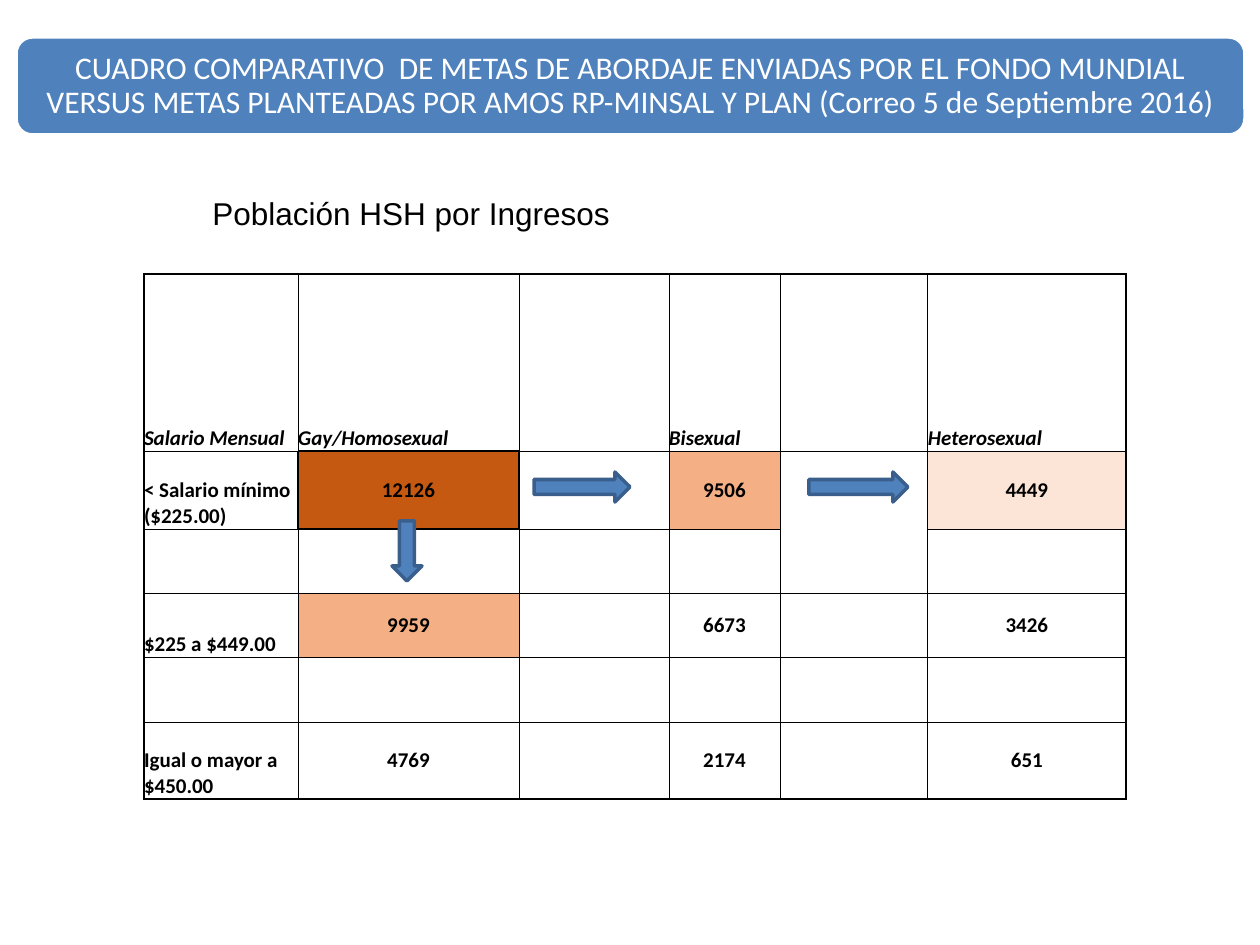
import lxml.etree
import pptx
import pptx.dml.color
import pptx.enum.shapes
import pptx.enum.text
import pptx.oxml.ns
import pptx.util

EMU_PER_PX = 914400 / 126
SHAPES = pptx.enum.shapes.MSO_SHAPE
ALIGN = pptx.enum.text.PP_ALIGN
ANCHOR = pptx.enum.text.MSO_ANCHOR
AUTO_SIZE = pptx.enum.text.MSO_AUTO_SIZE

BLACK = "000000"
WHITE = "FFFFFF"
BLUE = "4F81BD"
DARK_BLUE = "3A5F8C"

TITLE = (
    "CUADRO COMPARATIVO  DE METAS DE ABORDAJE ENVIADAS POR EL FONDO MUNDIAL "
    "VERSUS METAS PLANTEADAS POR AMOS RP-MINSAL Y PLAN (Correo 5 de Septiembre 2016)"
)
COLUMN_WIDTHS = [154, 221, 150, 111, 148, 198]
ROW_HEIGHTS = [177, 78, 64, 64, 65, 77]
INCOME_ROWS = [
    ["Salario Mensual", "Gay/Homosexual", "", "Bisexual", "", "Heterosexual"],
    ["< Salario mínimo ($225.00)", "12126", "", "9506", "", "4449"],
    [""] * 6,
    ["$225 a $449.00", "9959", "", "6673", "", "3426"],
    [""] * 6,
    ["Igual o mayor a $450.00", "4769", "", "2174", "", "651"],
]
CELL_FILLS = {(1, 1): "C65911", (1, 3): "F4B084", (1, 5): "FCE4D6", (3, 1): "F4B084"}
FOCUS_CELL = (1, 1)
EDGES = {"lnL": (0, -1), "lnR": (0, 1), "lnT": (-1, 0), "lnB": (1, 0)}


def px(length):
    return pptx.util.Emu(round(length * EMU_PER_PX))


def color(value):
    return pptx.dml.color.RGBColor.from_string(value)


def place(shape, box):
    shape.left, shape.top, shape.width, shape.height = map(px, box)


def format_text(frame, name, size, value, bold=False, italic=False):
    for para in frame.paragraphs:
        for span in para.runs:
            span.font.name = name
            span.font.size = pptx.util.Pt(size)
            span.font.bold = bold
            span.font.italic = italic
            span.font.color.rgb = color(value)


def set_margins(frame, margin):
    frame.margin_left = frame.margin_right = px(margin)
    frame.margin_top = frame.margin_bottom = px(margin)


def add_block(page, kind, box, line):
    shape = page.shapes.add_shape(kind, *map(px, box))
    shape.shadow.inherit = False
    shape.fill.solid()
    shape.fill.fore_color.rgb = color(BLUE)
    shape.line.color.rgb = color(line)
    shape.line.width = pptx.util.Pt(2)
    return shape


def add_banner(page, box):
    left, top, width, height = box
    banner = add_block(page, SHAPES.ROUNDED_RECTANGLE, box, WHITE)
    title = page.shapes.title
    banner.element.addnext(title.element)
    place(title, (left + 5, top + 5, width - 10, height - 10))
    frame = title.text_frame
    frame.text = TITLE
    frame.word_wrap = True
    frame.auto_size = AUTO_SIZE.NONE
    frame.vertical_anchor = ANCHOR.MIDDLE
    set_margins(frame, 9)
    frame.paragraphs[0].alignment = ALIGN.CENTER
    frame.paragraphs[0].line_spacing = 0.9
    format_text(frame, "Calibri", 18, WHITE)


def add_heading(page, box):
    frame = page.shapes.add_textbox(*map(px, box)).text_frame
    frame.text = "Población HSH por Ingresos"
    frame.word_wrap = False
    frame.auto_size = AUTO_SIZE.SHAPE_TO_FIT_TEXT
    format_text(frame, "Arial", 18, BLACK)


def edge_width(row, column, step):
    neighbor = (row + step[0], column + step[1])
    inside = 0 <= neighbor[0] < len(ROW_HEIGHTS) and 0 <= neighbor[1] < len(COLUMN_WIDTHS)
    return 0.5 if inside and FOCUS_CELL not in ((row, column), neighbor) else 1


def add_borders(cell, row, column):
    properties = cell._tc.get_or_add_tcPr()
    qualify = pptx.oxml.ns.qn
    for index, (edge, step) in enumerate(EDGES.items()):
        width = pptx.util.Pt(edge_width(row, column, step))
        line = lxml.etree.Element(qualify("a:" + edge), w=str(int(width)))
        fill = lxml.etree.SubElement(line, qualify("a:solidFill"))
        lxml.etree.SubElement(fill, qualify("a:srgbClr"), val=BLACK)
        properties.insert(index, line)


def fill_cell(cell, row, column):
    cell.text = INCOME_ROWS[row][column]
    set_margins(cell, 0)
    is_label = row == 0 or column == 0
    cell.vertical_anchor = ANCHOR.BOTTOM if is_label else ANCHOR.MIDDLE
    cell.text_frame.paragraphs[0].alignment = ALIGN.LEFT if is_label else ALIGN.CENTER
    format_text(cell.text_frame, "Calibri", 12, BLACK, bold=True, italic=row == 0)
    if (row, column) in CELL_FILLS:
        cell.fill.solid()
        cell.fill.fore_color.rgb = color(CELL_FILLS[row, column])
    else:
        cell.fill.background()
    add_borders(cell, row, column)


def add_income_table(page, left, top):
    box = (left, top, sum(COLUMN_WIDTHS), sum(ROW_HEIGHTS))
    table = page.shapes.add_table(
        len(ROW_HEIGHTS), len(COLUMN_WIDTHS), *map(px, box)
    ).table
    table.first_row = False
    table.horz_banding = False
    for column, width in zip(table.columns, COLUMN_WIDTHS):
        column.width = px(width)
    for row, height in zip(table.rows, ROW_HEIGHTS):
        row.height = px(height)
    for row in range(len(ROW_HEIGHTS)):
        for column in range(len(COLUMN_WIDTHS)):
            fill_cell(table.cell(row, column), row, column)
    table.cell(1, 4).merge(table.cell(2, 4))


def add_flow_arrows(page, left, top):
    for kind, x, y, width, height in (
        (SHAPES.RIGHT_ARROW, 390, 198, 96, 30),
        (SHAPES.DOWN_ARROW, 248, 247, 30, 60),
        (SHAPES.RIGHT_ARROW, 665, 198, 99, 30),
    ):
        add_block(page, kind, (left + x, top + y, width, height), DARK_BLUE)


def main():
    deck = pptx.Presentation()
    deck.slide_width, deck.slide_height = px(1260), px(945)
    page = deck.slides.add_slide(deck.slide_layouts[5])
    add_banner(page, (16, 37, 1229, 98))
    add_income_table(page, 144, 274)
    add_flow_arrows(page, 144, 274)
    add_heading(page, (200, 188, 427, 50))
    deck.save("out.pptx")


if __name__ == "__main__":
    main()
